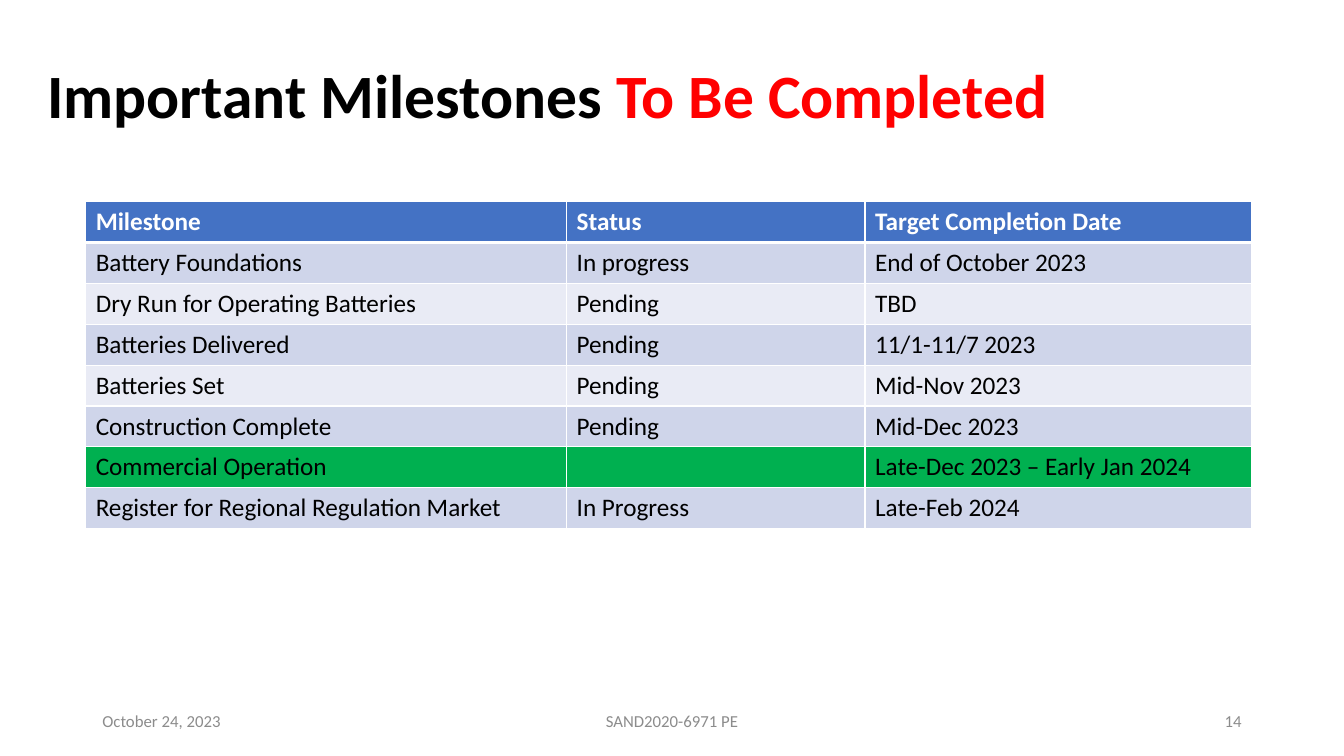
from pptx import Presentation
from pptx.dml.color import RGBColor
from pptx.enum.text import MSO_ANCHOR as Anchor, PP_ALIGN as Align
from pptx.oxml.ns import qn
from pptx.util import Cm, Pt
from lxml.etree import SubElement

WHITE, BLACK, RED, GRAY = "FFFFFF", "000000", "FF0000", "8C8C8C"
HEADER_BLUE, DARK_BAND, LIGHT_BAND, GREEN = "4472C4", "CFD5EA", "E9EBF5", "00B050"

COLUMN_WIDTHS = [12.12, 7.52, 9.73]
ROW_HEIGHT = 1.03
HIGHLIGHTED_ROW = 6
MILESTONES = [
    ("Milestone", "Status", "Target Completion Date"),
    ("Battery Foundations", "In progress", "End of October 2023"),
    ("Dry Run for Operating Batteries", "Pending", "TBD"),
    ("Batteries Delivered", "Pending", "11/1-11/7 2023"),
    ("Batteries Set", "Pending", "Mid-Nov 2023"),
    ("Construction Complete", "Pending", "Mid-Dec 2023"),
    ("Commercial Operation", "", "Late-Dec 2023 – Early Jan 2024"),
    ("Register for Regional Regulation Market", "In Progress", "Late-Feb 2024"),
]
FOOTERS = [
    ("October 24, 2023", 2.33, 7.62, Align.LEFT),
    ("SAND2020-6971 PE", 11.22, 11.43, Align.CENTER),
    ("14", 23.92, 7.62, Align.RIGHT),
]


def color(value):
    return RGBColor.from_string(value)


def row_fill(row):
    if row == 0:
        return HEADER_BLUE
    if row == HIGHLIGHTED_ROW:
        return GREEN
    return DARK_BAND if row % 2 else LIGHT_BAND


class SlideBuilder:
    font_name = "Calibri"

    def __init__(self, slide):
        self.slide = slide

    def run(self, paragraph, text, size, text_color, bold=False):
        run = paragraph.add_run()
        run.text = text
        run.font.name = self.font_name
        run.font.size = Pt(size)
        run.font.bold = bold
        run.font.color.rgb = color(text_color)

    def text(self, left, top, width, height, parts, size, bold=False,
             align=Align.LEFT, line_spacing=1.0):
        shape = self.slide.shapes.add_textbox(Cm(left), Cm(top), Cm(width), Cm(height))
        frame = shape.text_frame
        frame.word_wrap = True
        frame.vertical_anchor = Anchor.MIDDLE
        paragraph = frame.paragraphs[0]
        paragraph.alignment = align
        paragraph.line_spacing = line_spacing
        for text, text_color in parts:
            self.run(paragraph, text, size, text_color, bold)

    def borders(self, cell, widths):
        properties = cell._tc.get_or_add_tcPr()
        for side, width in widths.items():
            line = SubElement(properties, qn(f"a:ln{side}"), w=str(Pt(width)))
            fill = SubElement(line, qn("a:solidFill"))
            SubElement(fill, qn("a:srgbClr"), val=WHITE)

    def table(self, left, top, column_widths, row_height, rows):
        shape = self.slide.shapes.add_table(
            len(rows), len(column_widths), Cm(left), Cm(top),
            Cm(sum(column_widths)), Cm(row_height * len(rows)))
        table = shape.table
        for column, width in zip(table.columns, column_widths):
            column.width = Cm(width)
        for row, texts in enumerate(rows):
            table.rows[row].height = Cm(row_height)
            header = row == 0
            for column, text in enumerate(texts):
                cell = table.cell(row, column)
                self.borders(cell, {"L": 1, "R": 1, "T": 3 if row == 1 else 1,
                                    "B": 3 if header else 1})
                cell.fill.solid()
                cell.fill.fore_color.rgb = color(row_fill(row))
                if text:
                    self.run(cell.text_frame.paragraphs[0], text, 18,
                             WHITE if header else BLACK, header)


def main():
    presentation = Presentation()
    presentation.slide_width, presentation.slide_height = Cm(33.87), Cm(19.05)
    builder = SlideBuilder(presentation.slides.add_slide(presentation.slide_layouts[6]))
    builder.text(0.94, 1.02, 30.61, 2.92,
                 [("Important Milestones ", BLACK), ("To Be Completed", RED)],
                 44, bold=True, line_spacing=0.9)
    builder.table(2.16, 5.08, COLUMN_WIDTHS, ROW_HEIGHT, MILESTONES)
    for text, left, width, align in FOOTERS:
        builder.text(left, 17.65, width, 1.02, [(text, GRAY)], 12, align=align)
    presentation.save("out.pptx")


if __name__ == "__main__":
    main()
